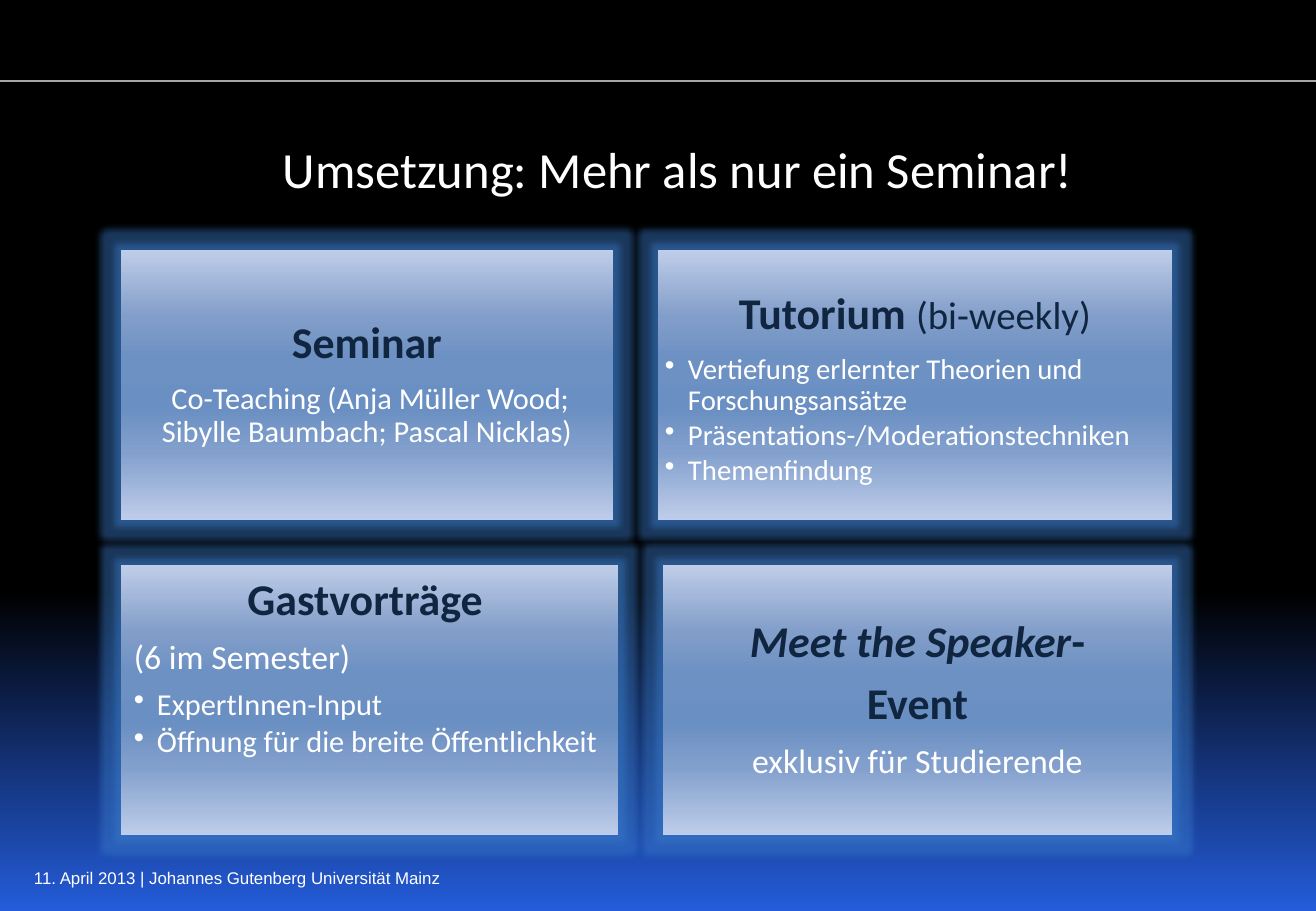
from dataclasses import dataclass

import pptx
import pptx.dml.color
import pptx.enum.shapes
import pptx.enum.text
import pptx.oxml
import pptx.oxml.ns
import pptx.util

EMU_PER_PX = 7526
WHITE, NAVY = "FFFFFF", "10253F"
CENTER = pptx.enum.text.PP_ALIGN.CENTER
LEFT = pptx.enum.text.PP_ALIGN.LEFT
TOP = pptx.enum.text.MSO_ANCHOR.TOP
MIDDLE = pptx.enum.text.MSO_ANCHOR.MIDDLE
BACKGROUND_STOPS = [(0, "000000"), (65, "000000"), (100, "245CD9")]
CARD_STOPS = [(0, "BFCDE8"), (25, "819DC9"), (40, "6D91C3"), (50, "6A8FC3"),
              (60, "6D91C3"), (75, "83A0CD"), (100, "BECDEA")]


@dataclass
class Run:
    text: str
    size: int
    color: str = WHITE
    bold: bool = False
    italic: bool = False
    font: str = "Calibri"


@dataclass
class Para:
    runs: list[Run]
    align: int = CENTER
    bullet: bool = False
    line_spacing: float = 0.9
    after: float = 0.35  # share of the font size


@dataclass
class Card:
    left: int
    top: int
    width: int
    inset: int
    inset_top: int
    anchor: int
    paras: list[Para]


def px(n: int) -> int:
    return pptx.util.Emu(n * EMU_PER_PX)


def rgb(color: str) -> pptx.dml.color.RGBColor:
    return pptx.dml.color.RGBColor.from_string(color)


def xml(tag: str, body: str = "", attrs: str = ""):
    return pptx.oxml.parse_xml(f"<a:{tag} {pptx.oxml.ns.nsdecls('a')} {attrs}>{body}</a:{tag}>")


def heading(text: str, italic: bool = False) -> Run:
    return Run(text, 26, NAVY, True, italic)


def bullet(text: str, size: int) -> Para:
    return Para([Run(text, size)], LEFT, True, after=0.15)


def set_gradient(fill, owner, stops: list[tuple[int, str]]) -> None:
    """Fill downwards through all stops; owner is the element holding the fill."""
    fill.gradient()
    fill.gradient_angle = 270
    gs_list = owner.xpath(".//a:gsLst")[0]
    for gs in list(gs_list):
        gs_list.remove(gs)
    for pos, color in stops:
        gs_list.append(xml("gs", f'<a:srgbClr val="{color}"/>', f'pos="{pos * 1000}"'))


def write(tf, paras: list[Para]) -> None:
    for i, para in enumerate(paras):
        p = tf.paragraphs[0] if i == 0 else tf.add_paragraph()
        p.alignment = para.align
        p.line_spacing = para.line_spacing
        p.space_before = pptx.util.Pt(0)
        p.space_after = pptx.util.Pt(round(para.after * para.runs[0].size, 1))
        if para.bullet:
            ppr = p._p.get_or_add_pPr()
            ppr.set("marL", str(px(23)))
            ppr.set("indent", str(-px(23)))
            ppr.append(xml("buChar", attrs='char="•"'))
        for run in para.runs:
            r = p.add_run()
            r.text = run.text
            r.font.name, r.font.size = run.font, pptx.util.Pt(run.size)
            r.font.bold, r.font.italic = run.bold, run.italic
            r.font.color.rgb = rgb(run.color)


def add_text(s, left: int, top: int, width: int, height: int, para: Para) -> None:
    tf = s.shapes.add_textbox(px(left), px(top), px(width), px(height)).text_frame
    tf.word_wrap = True
    write(tf, [para])


def add_card(s, card: Card) -> None:
    sp = s.shapes.add_shape(pptx.enum.shapes.MSO_SHAPE.RECTANGLE, px(card.left),
                            px(card.top), px(card.width), px(270))
    sp.shadow.inherit = False
    set_gradient(sp.fill, sp._element.spPr, CARD_STOPS)
    sp.line.fill.background()
    # Blue glow around the card
    color = '<a:srgbClr val="3A7CCB"><a:alpha val="45000"/></a:srgbClr>'
    sp._element.spPr.xpath("./a:effectLst")[0].append(xml("glow", color, 'rad="101600"'))
    tf = sp.text_frame
    tf.word_wrap = True
    tf.vertical_anchor = card.anchor
    tf.margin_left = tf.margin_right = tf.margin_bottom = px(card.inset)
    tf.margin_top = px(card.inset_top)
    write(tf, card.paras)


CARDS = [
    Card(121, 250, 492, 13, 13, MIDDLE, [
        Para([heading("Seminar")]),
        Para([Run(" Co-Teaching (Anja Müller Wood; Sibylle Baumbach; Pascal Nicklas)", 18)]),
    ]),
    Card(658, 250, 514, 7, 42, TOP, [
        Para([heading("Tutorium "), Run("(bi-weekly)", 23, NAVY)]),
        bullet("Vertiefung erlernter Theorien und Forschungsansätze", 17),
        bullet("Präsentations-/Moderationstechniken", 17),
        bullet("Themenfindung", 17),
    ]),
    Card(121, 565, 497, 13, 13, TOP, [
        Para([heading("Gastvorträge"), Run(" ", 22, NAVY)]),
        Para([Run("(6 im Semester)", 20)], LEFT),
        bullet("ExpertInnen-Input", 18),
        bullet("Öffnung für die breite Öffentlichkeit", 18),
    ]),
    Card(663, 565, 509, 13, 13, MIDDLE, [
        Para([heading("Meet the Speaker", True), heading("-")]),
        Para([heading("Event")]),
        Para([Run("exklusiv für Studierende", 20)]),
    ]),
]


def main() -> None:
    prs = pptx.Presentation()
    prs.slide_width, prs.slide_height = px(1316), px(911)
    s = prs.slides.add_slide(prs.slide_layouts[6])
    set_gradient(s.background.fill, s._element, BACKGROUND_STOPS)

    # Header rule
    rule = s.shapes.add_connector(pptx.enum.shapes.MSO_CONNECTOR.STRAIGHT,
                                  px(0), px(81), px(1316), px(81))
    rule.line.color.rgb = rgb("A6A6A6")
    rule.line.width = pptx.util.Pt(0.75)
    rule._element.spPr.append(xml("effectLst"))

    # Title and footer
    add_text(s, 85, 132, 1186, 85, Para([Run("Umsetzung: Mehr als nur ein Seminar!", 30)],
                                        line_spacing=1.0, after=0))
    add_text(s, 22, 862, 626, 40, Para(
        [Run("11. April 2013 | Johannes Gutenberg Universität Mainz", 10, font="Arial")],
        LEFT, line_spacing=1.0, after=0))

    # Four cards
    for card in CARDS:
        add_card(s, card)
    prs.save("out.pptx")


if __name__ == "__main__":
    main()
